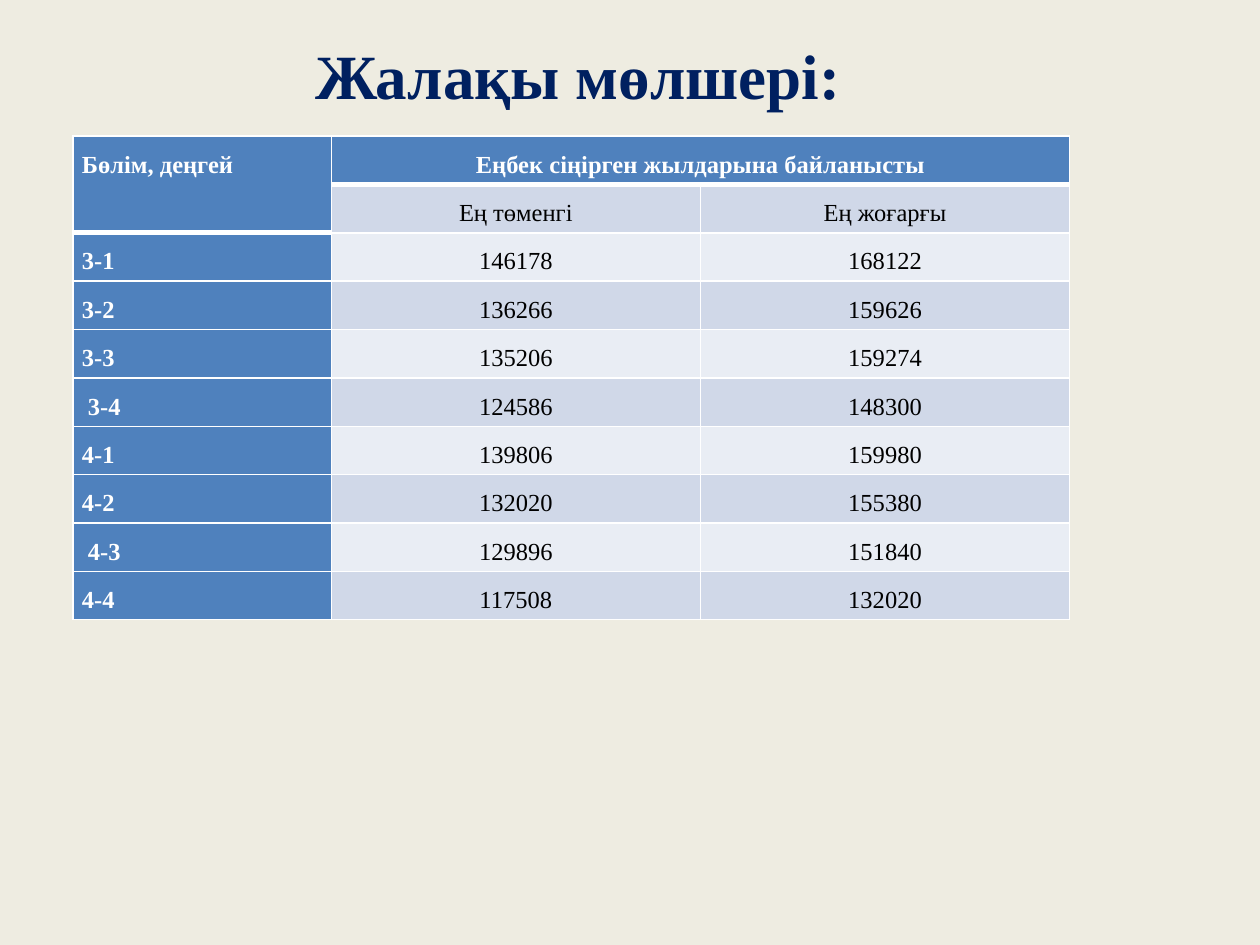
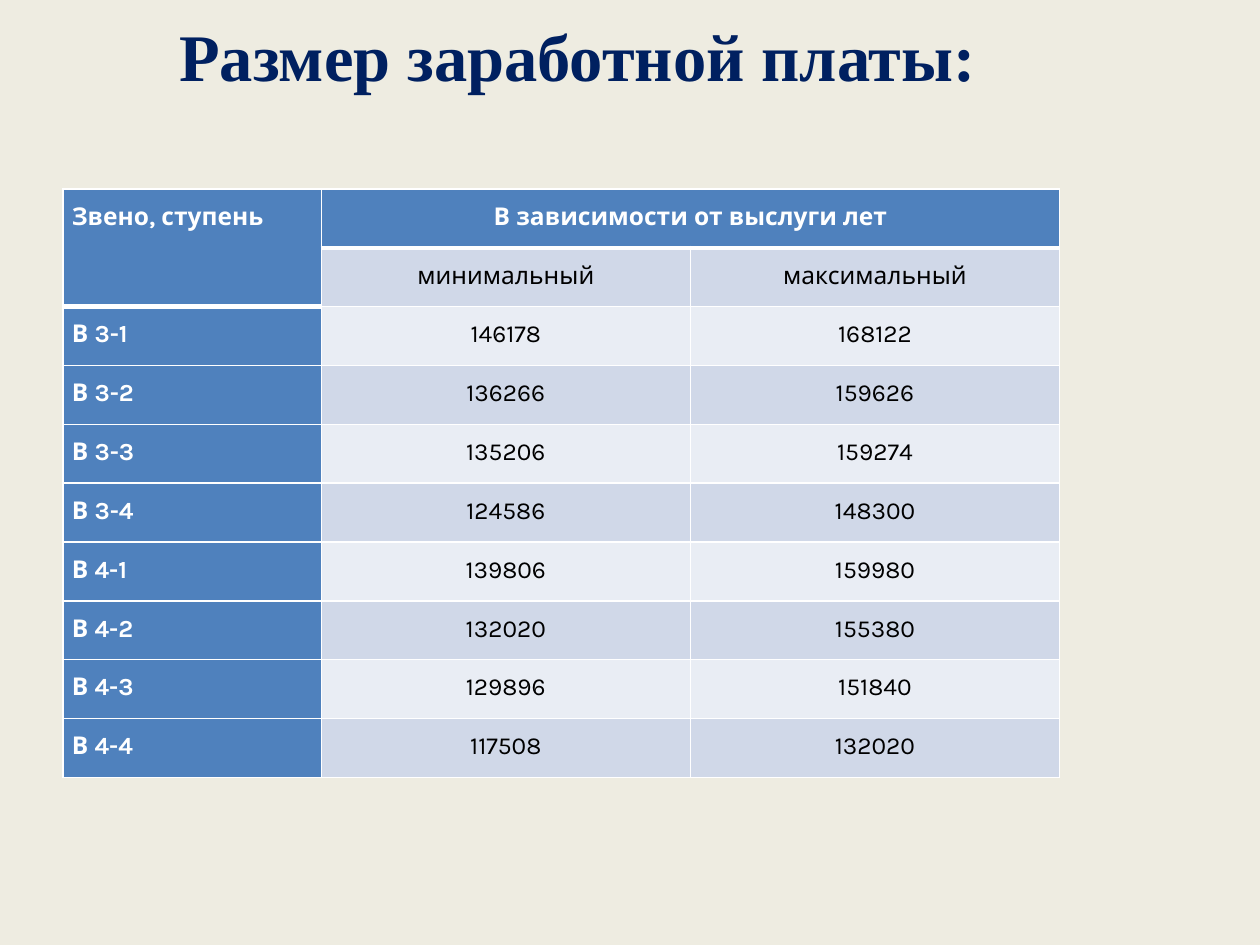
from lxml import etree
from pptx import Presentation
from pptx.dml.color import RGBColor
from pptx.enum.text import MSO_ANCHOR, PP_ALIGN
from pptx.oxml.ns import qn
from pptx.util import Inches, Pt

LEFT, CENTER = PP_ALIGN.LEFT, PP_ALIGN.CENTER
TOP = MSO_ANCHOR.TOP

COLORS = {
    "background": "EEECE1",
    "title": "002060",
    "header": "4F81BD",
    "dark_band": "D0D8E8",
    "light_band": "E9EDF4",
    "white": "FFFFFF",
    "black": "000000",
}
TITLE_FONT = "Times New Roman"
COLUMN_WIDTHS = (2.05, 2.93, 2.93)
HEADER_ROWS = 2
THIN, THICK = 1, 3

SALARIES = [
    (146178, 168122),
    (136266, 159626),
    (135206, 159274),
    (124586, 148300),
    (139806, 159980),
    (132020, 155380),
    (129896, 151840),
    (117508, 132020),
]
KAZAKH_GRADES = ["3-1", "3-2", "3-3", " 3-4", "4-1", "4-2", " 4-3", "4-4"]
RUSSIAN_GRADES = [f"В {group}-{step}" for group in (3, 4) for step in range(1, 5)]


def rgb(name):
    return RGBColor.from_string(COLORS[name])


def write_text(text_frame, text, size, font, color, bold=False, align=LEFT, line_spacing=None):
    paragraph = text_frame.paragraphs[0]
    paragraph.alignment = align
    if line_spacing:
        paragraph.line_spacing = Pt(line_spacing)
    run = paragraph.add_run()
    run.text = text
    run.font.size = Pt(size)
    run.font.name = font
    run.font.bold = bold
    run.font.color.rgb = rgb(color)


def set_borders(cell, top, bottom):
    """Draw white borders; top and bottom are widths in points."""
    properties = cell._tc.get_or_add_tcPr()
    for side, width in (("L", THIN), ("R", THIN), ("T", top), ("B", bottom)):
        line = etree.SubElement(properties, qn(f"a:ln{side}"), w=str(Pt(width)))
        fill = etree.SubElement(line, qn("a:solidFill"))
        etree.SubElement(fill, qn("a:srgbClr"), val=COLORS["white"])


def add_title(slide, box, text, size):
    shape = slide.shapes.add_textbox(*map(Inches, box))
    frame = shape.text_frame
    frame.word_wrap = True
    frame.vertical_anchor = TOP
    frame.margin_top = Inches(0.12)
    write_text(frame, text, size, TITLE_FONT, "title", bold=True, align=CENTER)


def format_cell(cell, row, column, font, text):
    is_header = row == 0 or column == 0
    last_header_row = HEADER_ROWS - 1 if column == 0 else 0
    set_borders(
        cell,
        top=THICK if row == last_header_row + 1 else THIN,
        bottom=THICK if row == last_header_row else THIN,
    )
    band = "light_band" if row % 2 == 0 else "dark_band"
    cell.fill.solid()
    cell.fill.fore_color.rgb = rgb("header" if is_header else band)
    cell.margin_left = cell.margin_right = Inches(0.07)
    cell.margin_top, cell.margin_bottom = Inches(0.17), 0
    cell.vertical_anchor = TOP
    if text:
        write_text(cell.text_frame, text, 14, font, "white" if is_header else "black",
                   bold=is_header, align=LEFT if column == 0 else CENTER, line_spacing=12)


def add_salary_table(slide, box, headings, grades, font):
    corner, seniority, lowest, highest = headings
    rows = [(corner, seniority, ""), ("", lowest, highest)]
    rows += [(grade, str(low), str(high)) for grade, (low, high) in zip(grades, SALARIES)]

    frame = slide.shapes.add_table(len(rows), len(COLUMN_WIDTHS), *map(Inches, box))
    table = frame.table
    table.first_row = table.horz_banding = False
    for column, width in zip(table.columns, COLUMN_WIDTHS):
        column.width = Inches(width)
    for table_row in table.rows:
        table_row.height = Inches(box[3] / len(rows))
    table.cell(0, 0).merge(table.cell(HEADER_ROWS - 1, 0))
    table.cell(0, 1).merge(table.cell(0, 2))
    for row, texts in enumerate(rows):
        for column, text in enumerate(texts):
            format_cell(table.cell(row, column), row, column, font, text)


def add_salary_slide(presentation, title, title_size, title_box, table_box, headings, grades, font):
    slide = presentation.slides.add_slide(presentation.slide_layouts[6])
    slide.background.fill.solid()
    slide.background.fill.fore_color.rgb = rgb("background")
    add_title(slide, title_box, title, title_size)
    add_salary_table(slide, table_box, headings, grades, font)


def main():
    presentation = Presentation()
    presentation.slide_width, presentation.slide_height = Inches(10), Inches(7.5)
    add_salary_slide(
        presentation, "Жалақы мөлшері:", 36,
        title_box=(0.25, 0.17, 8.67, 7.17),
        table_box=(0.58, 1.08, 7.92, 3.84),
        headings=("Бөлім, деңгей", "Еңбек сіңірген жылдарына байланысты",
                  "Ең төменгі", "Ең жоғарғы"),
        grades=KAZAKH_GRADES, font=TITLE_FONT,
    )
    add_salary_slide(
        presentation, "Размер заработной платы:", 38,
        title_box=(0.25, 0, 8.67, 6.75),
        table_box=(0.5, 1.5, 7.92, 4.67),
        headings=("Звено, ступень", "В зависимости от выслуги лет",
                  "минимальный", "максимальный"),
        grades=RUSSIAN_GRADES, font="Karla",
    )
    presentation.save("out.pptx")


if __name__ == "__main__":
    main()
